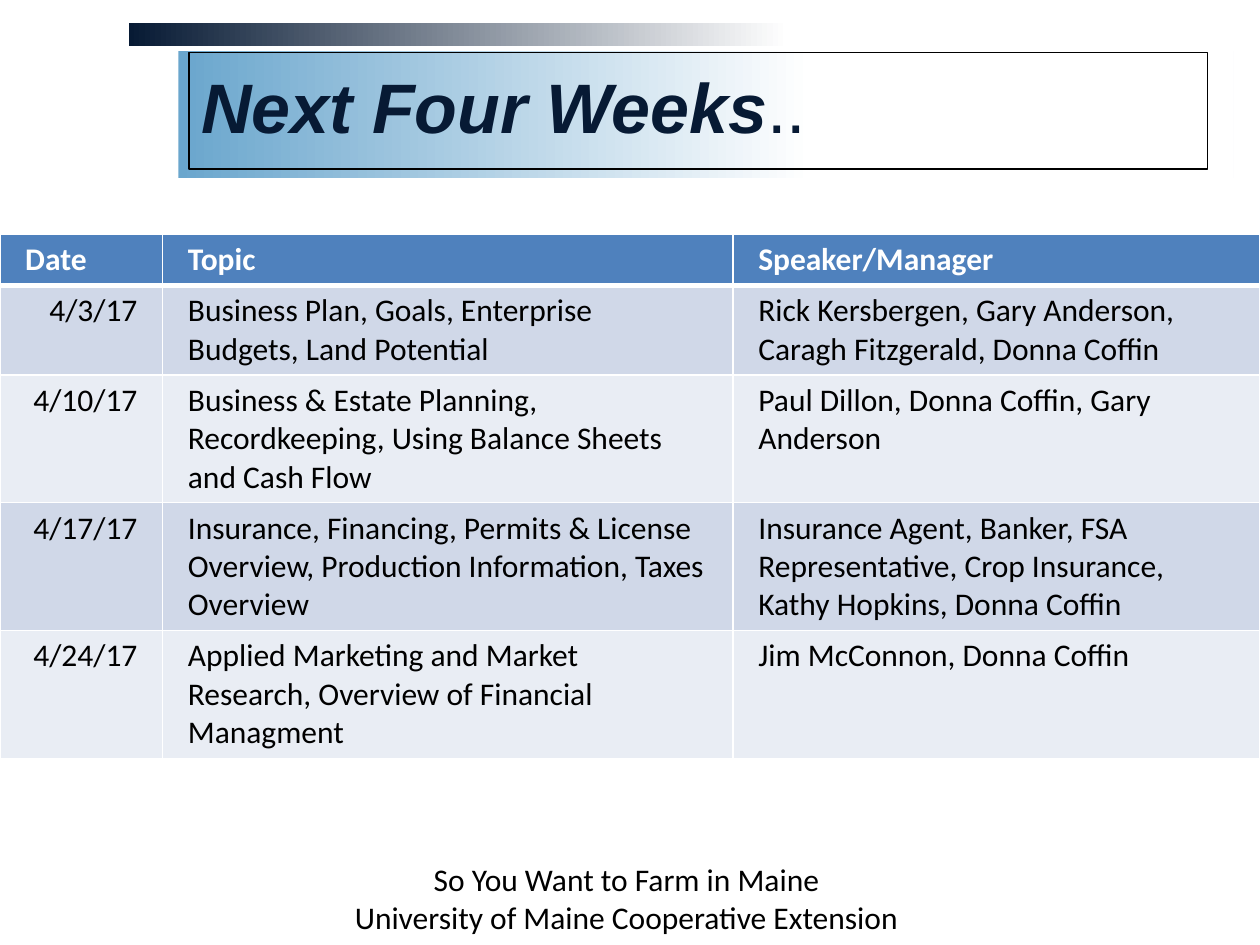
"""Build the slide that lists the next four weeks of farm classes."""
from dataclasses import dataclass
from typing import Any

from lxml import etree
from pptx import Presentation
from pptx.dml.color import RGBColor
from pptx.enum.shapes import MSO_SHAPE
from pptx.enum.text import MSO_ANCHOR, PP_ALIGN
from pptx.oxml.ns import qn
from pptx.util import Pt

RECT = MSO_SHAPE.RECTANGLE
TOP, MIDDLE = MSO_ANCHOR.TOP, MSO_ANCHOR.MIDDLE
LEFT, CENTER, RIGHT = PP_ALIGN.LEFT, PP_ALIGN.CENTER, PP_ALIGN.RIGHT


@dataclass(frozen=True)
class Theme:
    navy: str = "071A34"
    sky: str = "6AA6CD"
    white: str = "FFFFFF"
    black: str = "000000"
    head: str = "4F81BD"
    bands: tuple[str, str] = ("D0D8E8", "E9EDF4")
    title: int = 40
    body: int = 18
    display: str = "Arial"
    text: str = "Calibri"


@dataclass(frozen=True)
class Box:
    left: float
    top: float
    width: float
    height: float

    def place(self) -> tuple[Pt, Pt, Pt, Pt]:
        return Pt(self.left), Pt(self.top), Pt(self.width), Pt(self.height)


@dataclass(frozen=True)
class Bar:
    box: Box
    color: str


@dataclass(frozen=True)
class Week:
    date: str
    topic: str
    people: str
    lines: int


THEME = Theme()
LINE, PAD = 21.95, 3.6
BARS = (
    Bar(Box(102, 29, 603, 72.5), THEME.sky),
    Bar(Box(73.5, 13, 628.5, 13.5), THEME.navy),
)
TITLE = Box(108, 30, 582, 66.5)
FOOTER = Box(172, 488, 372, 59)
GRID = Box(0, 134, 720, 300)
COLUMNS = (93, 326, 301)
WEEKS = (
    Week("Date", "Topic", "Speaker/Manager", 1),
    Week("4/3/17", "Business Plan, Goals, Enterprise Budgets, Land Potential",
         "Rick Kersbergen, Gary Anderson, Caragh Fitzgerald, Donna Coffin", 2),
    Week("4/10/17",
         "Business & Estate Planning, Recordkeeping, Using Balance Sheets and Cash Flow",
         "Paul Dillon, Donna Coffin, Gary Anderson", 3),
    Week("4/17/17",
         "Insurance, Financing, Permits & License Overview, "
         "Production Information, Taxes Overview",
         "Insurance Agent, Banker, FSA Representative, Crop Insurance, "
         "Kathy Hopkins, Donna Coffin", 3),
    Week("4/24/17",
         "Applied Marketing and Market Research, Overview of Financial Managment",
         "Jim McConnon, Donna Coffin", 3),
)


def apply(target: Any, values: dict[str, Any]) -> None:
    for name, value in values.items():
        setattr(target, name, value)


def write(para: Any, text: str, color: str, **look: Any) -> None:
    run = para.add_run()
    run.text = text
    base = {"name": THEME.text, "size": Pt(THEME.body), "bold": False, "italic": False}
    apply(run.font, base | look)
    run.font.color.rgb = RGBColor.from_string(color)


def draw_bar(slide: Any, bar: Bar) -> None:
    shape = slide.shapes.add_shape(RECT, *bar.box.place())
    shape.shadow.inherit = False
    shape.line.fill.background()
    shape.fill.gradient()
    shape.fill.gradient_angle = 0
    stops = ((0, bar.color), (0.6, THEME.white))
    for stop, (spot, color) in zip(shape.fill.gradient_stops, stops):
        stop.position = spot
        stop.color.rgb = RGBColor.from_string(color)


def draw_title(slide: Any) -> None:
    shape = slide.shapes.add_shape(RECT, *TITLE.place())
    shape.shadow.inherit = False
    shape.fill.background()
    shape.line.width = Pt(1)
    shape.line.color.rgb = RGBColor.from_string(THEME.black)
    apply(shape.text_frame, {"word_wrap": True, "vertical_anchor": MIDDLE})
    para = shape.text_frame.paragraphs[0]
    apply(para, {"alignment": LEFT, "line_spacing": 0.9})
    look = {"name": THEME.display, "size": Pt(THEME.title)}
    write(para, "Next Four Weeks", THEME.navy, bold=True, italic=True, **look)
    write(para, "..", THEME.navy, **look)


def draw_footer(slide: Any) -> None:
    frame = slide.shapes.add_textbox(*FOOTER.place()).text_frame
    apply(frame, {"word_wrap": True, "vertical_anchor": TOP})
    lines = ("So You Want to Farm in Maine", "University of Maine Cooperative Extension")
    for index, text in enumerate(lines):
        para = frame.add_paragraph() if index else frame.paragraphs[0]
        para.alignment = CENTER
        write(para, text, THEME.black)


def edge(cell: Any, sides: dict[str, int]) -> None:
    props = cell._tc.get_or_add_tcPr()
    for side, width in sides.items():
        line = etree.SubElement(props, qn(f"a:ln{side}"), w=str(Pt(width)))
        fill = etree.SubElement(line, qn("a:solidFill"))
        etree.SubElement(fill, qn("a:srgbClr"), val=THEME.white)


def draw_cell(cell: Any, text: str, row: int, col: int) -> None:
    head = row == 0
    edge(cell, {"L": 1, "R": 1, "T": 3 if row == 1 else 1, "B": 3 if head else 1})
    cell.fill.solid()
    color = THEME.head if head else THEME.bands[(row - 1) % 2]
    cell.fill.fore_color.rgb = RGBColor.from_string(color)
    apply(cell, {"margin_left": Pt(14.4), "margin_right": Pt(14.4),
                 "margin_top": Pt(PAD), "margin_bottom": Pt(PAD),
                 "vertical_anchor": TOP})
    para = cell.text_frame.paragraphs[0]
    para.alignment = RIGHT if col == 0 and not head else LEFT
    write(para, text, THEME.white if head else THEME.black, bold=head)


def draw_grid(slide: Any) -> None:
    table = slide.shapes.add_table(len(WEEKS), len(COLUMNS), *GRID.place()).table
    for column, width in zip(table.columns, COLUMNS):
        column.width = Pt(width)
    for row, week in enumerate(WEEKS):
        table.rows[row].height = Pt(week.lines * LINE + 2 * PAD)
        for col, text in enumerate((week.date, week.topic, week.people)):
            draw_cell(table.cell(row, col), text, row, col)


def main() -> None:
    deck = Presentation()
    apply(deck, {"slide_width": Pt(720), "slide_height": Pt(540)})
    slide = deck.slides.add_slide(deck.slide_layouts[6])
    for bar in BARS:
        draw_bar(slide, bar)
    draw_footer(slide)
    draw_grid(slide)
    draw_title(slide)
    deck.save("out.pptx")


if __name__ == "__main__":
    main()
